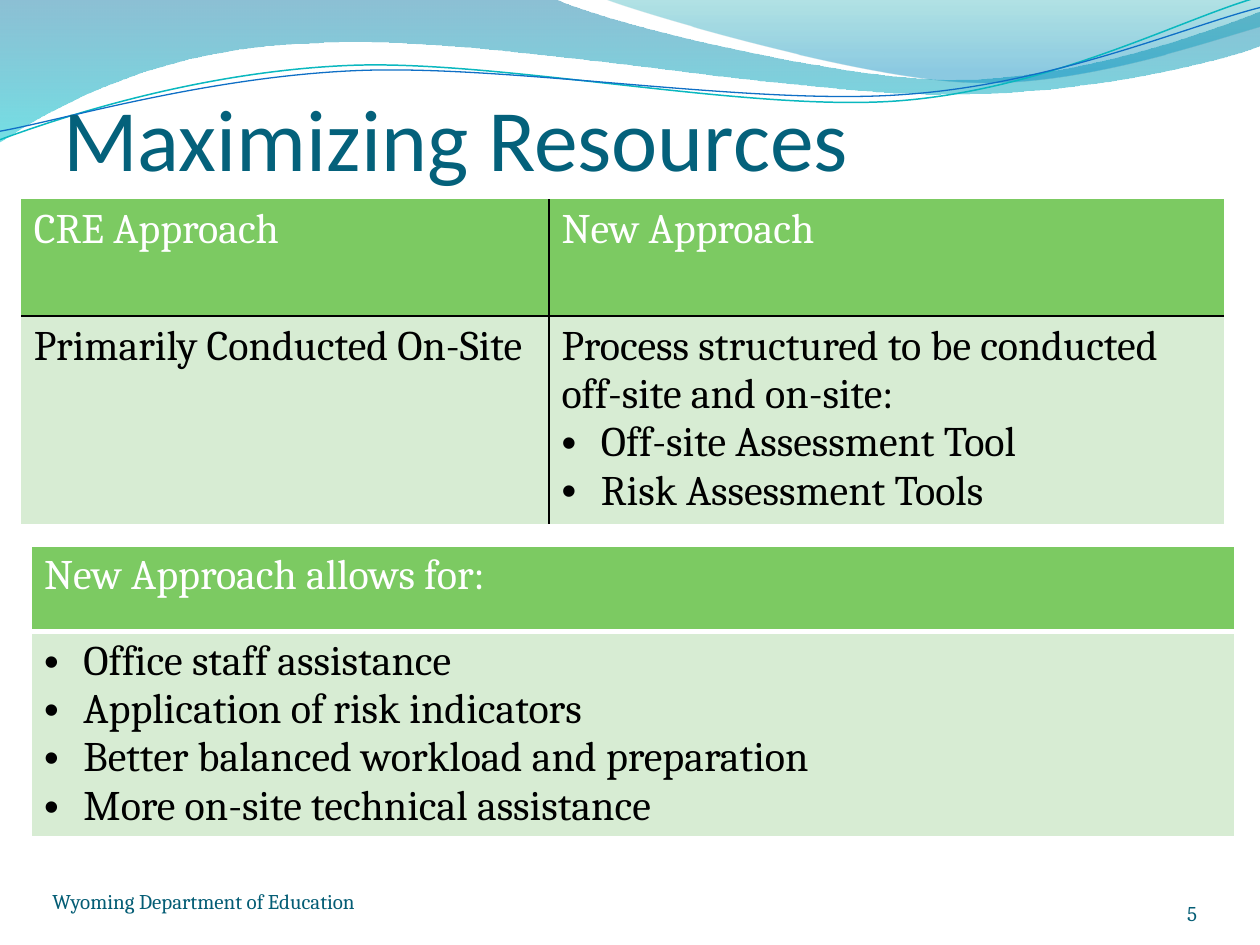
from lxml.etree import Element, SubElement as Sub
from pptx import Presentation
from pptx.dml.color import RGBColor as RGB
from pptx.enum.text import MSO_ANCHOR as Anchor, MSO_AUTO_SIZE as Auto, PP_ALIGN as Align
from pptx.oxml.ns import qn
from pptx.util import Pt

HUES = {"title": "04617B", "foot": "045D75", "head": "7CCA62", "body": "D7ECD3",
        "white": "FFFFFF", "black": "000000", "teal": "0AB8BF", "blue": "0F6FC6"}

# Content: a leading bullet sign marks a list item
TITLE = "Maximizing Resources"
FOOT = "Wyoming Department of Education"
PAGE = "5"
TABLES = [
    {"at": (12.1, 113.8), "cols": (301.6, 386), "rows": (66.8, 118.7), "height": 189.4,
     "rule": "black", "frame": False, "base": 1,
     "cells": [[["CRE Approach"], ["New Approach"]],
               [["Primarily Conducted On-Site"],
                ["Process structured to be conducted off-site and on-site:",
                 "•Off-site Assessment Tool", "•Risk Assessment Tools"]]]},
    {"at": (18, 311.9), "cols": (687.6,), "rows": (48.8, 105.1), "height": 171.4,
     "rule": "white", "frame": True, "base": 3,
     "cells": [[["New Approach allows for:"]],
               [["•Office staff assistance", "•Application of risk indicators",
                 "•Better balanced workload and preparation",
                 "•More on-site technical assistance"]]]},
]

# Waves: start, then steps of one point (line) or three (curve)
# Stops: position, colour, opacity in percent
BANDS = [
    ((0, 0), [[(316.8, -0.7)],
              [(342.7, 12.2), (478.1, 45.4), (545.8, 45.4)],
              [(614.2, 45.4), (689.8, 18.7), (720, 6.5)],
              [(720.7, 25.9)],
              [(707.8, 31.7), (626.4, 54.7), (537.1, 54)],
              [(447.8, 54), (275, 20.2), (185, 24.5)],
              [(92.9, 25.9), (33.1, 59.8), (-0.7, 81.4)]],
     [(0, "0074A1", 45), (1, "00C6CF", 55)]),
    ((344.9, -0.7), [[(366.5, 7.9), (491, 44.6), (553.7, 46.8)],
                     [(616.3, 49.7), (691.9, 23), (720, 15.1)],
                     [(720, 0)]],
     [(0, "00A1A9", 30), (0.8, "008BBF", 45)]),
]
TILT = 357.3
LINES = [
    ((-1.4, 62.9), [[(33.8, 51.7), (114.1, 29.4), (199.8, 29.9)],
                    [(284.8, 30.3), (425.8, 67.3), (512.4, 64.9)],
                    [(599, 62.4), (676.4, 25.7), (720.2, 15.5)]], "teal", 0.85),
    ((-1.1, 58), [[(32.9, 53.7), (118.3, 32.5), (204.1, 33)],
                  [(290.6, 33.4), (428.9, 63.8), (515.5, 61.4)],
                  [(601.3, 59.6), (678.4, 30.1), (721.4, 21.3)]], "blue", 0.75),
]


def hue(name):
    return RGB.from_string(HUES.get(name, name))


def write(frame, texts, size=24, font="Cambria", color="black", align=Align.LEFT):
    for i, text in enumerate(texts):
        para = frame.paragraphs[0] if i == 0 else frame.add_paragraph()
        para.alignment = align
        if text.startswith("•"):
            props = para._p.get_or_add_pPr()
            props.set("marL", str(Pt(22.5)))
            props.set("indent", str(-Pt(22.5)))
            Sub(props, qn("a:buFont"), typeface="Arial")
            Sub(props, qn("a:buChar"), char="•")
        run = para.add_run()
        run.text = text.lstrip("•")
        run.font.size, run.font.name, run.font.bold = Pt(size), font, False
        run.font.color.rgb = hue(color)


def place(shape, box, top=0):
    shape.left, shape.top, shape.width, shape.height = map(Pt, box)
    frame = shape.text_frame
    frame.word_wrap, frame.auto_size = True, Auto.NONE
    frame.vertical_anchor = Anchor.BOTTOM
    frame.margin_left = frame.margin_right = frame.margin_bottom = 0
    frame.margin_top = Pt(top)
    return frame


def draw(shapes, start, steps, close):
    # Outline in hundredths of a point
    pts = [(round(x * 100), round(y * 100)) for x, y in [start, *sum(steps, [])]]
    pen = shapes.build_freeform(*pts[0], scale=Pt(0.01))
    pen.add_line_segments(pts[1:], close=close)
    shape = pen.convert_to_shape()
    shape.shadow.inherit = False
    # Fold each three points into one curve
    marks = iter(list(shape._element.iter(qn("a:lnTo"))))
    for step in steps:
        group = [next(marks) for _ in step]
        if len(group) == 3:
            curve = Element(qn("a:cubicBezTo"))
            group[0].addprevious(curve)
            for mark in group:
                curve.append(mark[0])
                mark.getparent().remove(mark)
    return shape


def edge(cell, side, color, width=1):
    line = Sub(cell._tc.get_or_add_tcPr(), qn("a:ln" + side), w=str(Pt(width)))
    if color:
        Sub(Sub(line, qn("a:solidFill")), qn("a:srgbClr"), val=HUES[color])
    else:
        Sub(line, qn("a:noFill"))


def grid(shapes, at, cols, rows, height, rule, frame, base, cells):
    holder = shapes.add_table(len(rows), len(cols), *map(Pt, (*at, sum(cols), height)))
    table = holder.table
    for col, width in zip(table.columns, cols):
        col.width = Pt(width)
    for row, tall in zip(table.rows, rows):
        row.height = Pt(tall)
    holder.height = Pt(height)
    for r, line in enumerate(cells):
        for c, texts in enumerate(line):
            cell = table.cell(r, c)
            inner = {"L": c > 0, "R": c < len(cols) - 1, "T": r > 0, "B": r < len(rows) - 1}
            for side, inside in inner.items():
                width = base if side == "B" and r == 0 else 1
                edge(cell, side, rule if inside or frame else None, width)
            cell.fill.solid()
            cell.fill.fore_color.rgb = hue("body" if r else "head")
            write(cell.text_frame, texts, color="black" if r else "white")


def main():
    deck = Presentation()
    deck.slide_width, deck.slide_height = Pt(720), Pt(540)
    slide = deck.slides.add_slide(deck.slide_layouts[5])
    shapes = slide.shapes
    title = shapes.title

    # Waves
    for start, steps, stops in BANDS:
        band = draw(shapes, start, steps, True)
        band.line.fill.background()
        band.fill.gradient()
        band.fill.gradient_angle = 270
        for stop, (pos, color, _) in zip(band.fill.gradient_stops, stops):
            stop.position, stop.color.rgb = pos, hue(color)
        marks = band._element.spPr.iter(qn("a:srgbClr"))
        for mark, stop in zip(list(marks), stops):
            Sub(mark, qn("a:alpha"), val=str(stop[2] * 1000))
    for start, steps, color, width in LINES:
        curve = draw(shapes, start, steps, False)
        curve.rotation = TILT
        curve.fill.background()
        curve.line.color.rgb, curve.line.width = hue(color), Pt(width)

    # Title, in front of the waves
    shapes._spTree.append(title._element)
    write(place(title, (36, 18, 648, 90), top=3.6), [TITLE],
          size=50, font="Calibri", color="title")

    # Footer and page number
    for text, box, align in ((FOOT, (30, 493, 228, 29), Align.LEFT),
                             (PAGE, (624, 500, 60, 29), Align.RIGHT)):
        note = shapes.add_textbox(0, 0, 0, 0)
        write(place(note, box), [text], size=12, color="foot", align=align)

    # Tables
    for table in TABLES:
        grid(shapes, **table)

    deck.save("out.pptx")


if __name__ == "__main__":
    main()
